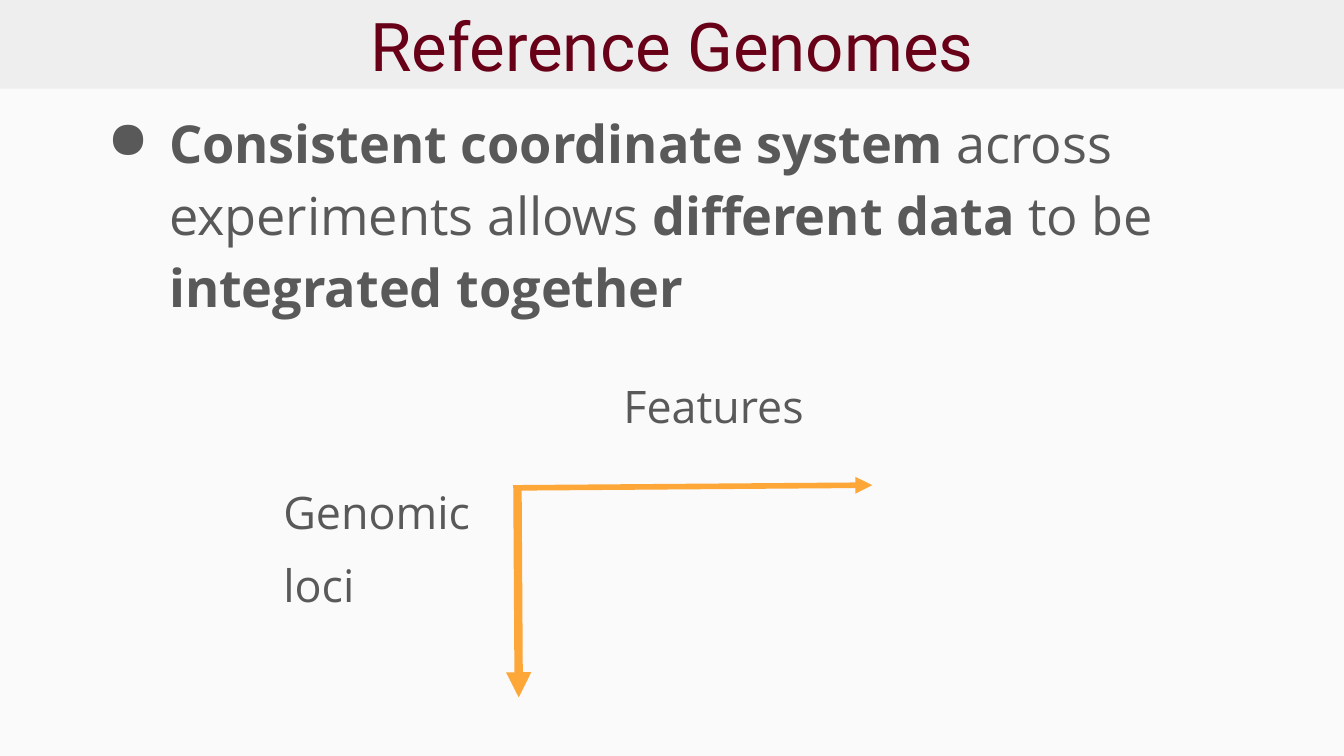
from dataclasses import dataclass

from lxml import etree
from pptx import Presentation
from pptx.dml.color import RGBColor
from pptx.enum import shapes, text
from pptx.oxml import ns
from pptx.util import Inches, Pt


@dataclass(frozen=True)
class Theme:
    background: str = "FAFAFA"
    band: str = "EEEEEE"
    title: str = "680018"
    body: str = "595959"
    arrow: str = "FDA739"
    title_font: str = "Roboto"
    body_font: str = "Open Sans"
    title_size: int = 36
    body_size: int = 28
    label_size: int = 24
    space_before: int = 10
    inset: float = 0.1


@dataclass(frozen=True)
class Box:
    left: float
    top: float
    width: float
    height: float

    def lengths(self) -> list:
        return [Inches(v) for v in (self.left, self.top, self.width, self.height)]


@dataclass(frozen=True)
class Label:
    box: Box
    lines: tuple[str, ...]


@dataclass(frozen=True)
class Arrow:
    start: tuple[float, float]
    end: tuple[float, float]
    weight: float


THEME = Theme()
SLIDE_WIDTH = 10
SLIDE_HEIGHT = SLIDE_WIDTH * 9 / 16
TITLE_BOX = Box(0, 0, SLIDE_WIDTH, 0.66)
BODY_BOX = Box(0.66, 0.66, 8.67, 4.36)
# Each run is its text and whether it is bold
BODY_RUNS = (
    ("Consistent coordinate system", True),
    (" across experiments allows ", False),
    ("different data ", True),
    ("to be ", False),
    ("integrated together", True),
)
ARROWS = (
    Arrow((3.85, 3.61), (3.86, 5.19), 4.5),
    Arrow((3.85, 3.63), (6.49, 3.61), 3),
)
LABELS = (
    Label(Box(2.01, 3.51, 1.72, 1.33), ("Genomic", "loci")),
    Label(Box(4.54, 2.72, 3.98, 1.33), ("Features",)),
)


def color(value: str) -> RGBColor:
    return RGBColor.from_string(value)


def add_xml(parent, tag: str, **attributes: str):
    return etree.SubElement(parent, ns.qn(tag), attributes)


def set_font(paragraph, name: str, size: int, value: str) -> None:
    paragraph.font.name = name
    paragraph.font.size = Pt(size)
    paragraph.font.color.rgb = color(value)


def prepare_frame(shape):
    frame = shape.text_frame
    frame.word_wrap = True
    frame.margin_left = frame.margin_right = Inches(THEME.inset)
    frame.margin_top = frame.margin_bottom = Inches(THEME.inset)
    return frame


def add_title(slide) -> None:
    shape = slide.shapes.add_shape(shapes.MSO_SHAPE.RECTANGLE, *TITLE_BOX.lengths())
    shape.shadow.inherit = False
    shape.fill.solid()
    shape.fill.fore_color.rgb = color(THEME.band)
    shape.line.fill.background()
    frame = prepare_frame(shape)
    frame.vertical_anchor = text.MSO_ANCHOR.MIDDLE
    paragraph = frame.paragraphs[0]
    paragraph.text = "Reference Genomes"
    paragraph.alignment = text.PP_ALIGN.CENTER
    set_font(paragraph, THEME.title_font, THEME.title_size, THEME.title)


def add_body(slide) -> None:
    frame = prepare_frame(slide.shapes.add_textbox(*BODY_BOX.lengths()))
    paragraph = frame.paragraphs[0]
    for words, bold in BODY_RUNS:
        run = paragraph.add_run()
        run.text = words
        run.font.bold = bold
    paragraph.line_spacing = 1.15
    paragraph.space_before = Pt(THEME.space_before)

    # Bullet with a hanging indent
    properties = paragraph._p.get_or_add_pPr()
    properties.set("marL", str(Inches(0.5)))
    properties.set("indent", str(Inches(-0.46)))
    add_xml(add_xml(properties, "a:buClr"), "a:srgbClr", val=THEME.body)
    add_xml(properties, "a:buChar", char="●")
    set_font(paragraph, THEME.body_font, THEME.body_size, THEME.body)


def add_arrow(slide, arrow: Arrow) -> None:
    points = [Inches(v) for v in (*arrow.start, *arrow.end)]
    connector = slide.shapes.add_connector(shapes.MSO_CONNECTOR.STRAIGHT, *points)
    connector.line.color.rgb = color(THEME.arrow)
    connector.line.width = Pt(arrow.weight)
    add_xml(connector.line._get_or_add_ln(), "a:tailEnd", type="triangle")
    add_xml(connector._element.spPr, "a:effectLst")


def add_label(slide, label: Label) -> None:
    frame = prepare_frame(slide.shapes.add_textbox(*label.box.lengths()))
    frame.text = "\n".join(label.lines)
    for paragraph in frame.paragraphs:
        paragraph.space_before = Pt(THEME.space_before)
        set_font(paragraph, THEME.body_font, THEME.label_size, THEME.body)


def main() -> None:
    presentation = Presentation()
    presentation.slide_width = Inches(SLIDE_WIDTH)
    presentation.slide_height = Inches(SLIDE_HEIGHT)
    slide = presentation.slides.add_slide(presentation.slide_layouts[6])
    slide.background.fill.solid()
    slide.background.fill.fore_color.rgb = color(THEME.background)

    # Heading and main point
    add_title(slide)
    add_body(slide)

    # Axes of the data matrix and their names
    for arrow in ARROWS:
        add_arrow(slide, arrow)
    for label in LABELS:
        add_label(slide, label)

    presentation.save("out.pptx")


if __name__ == "__main__":
    main()
